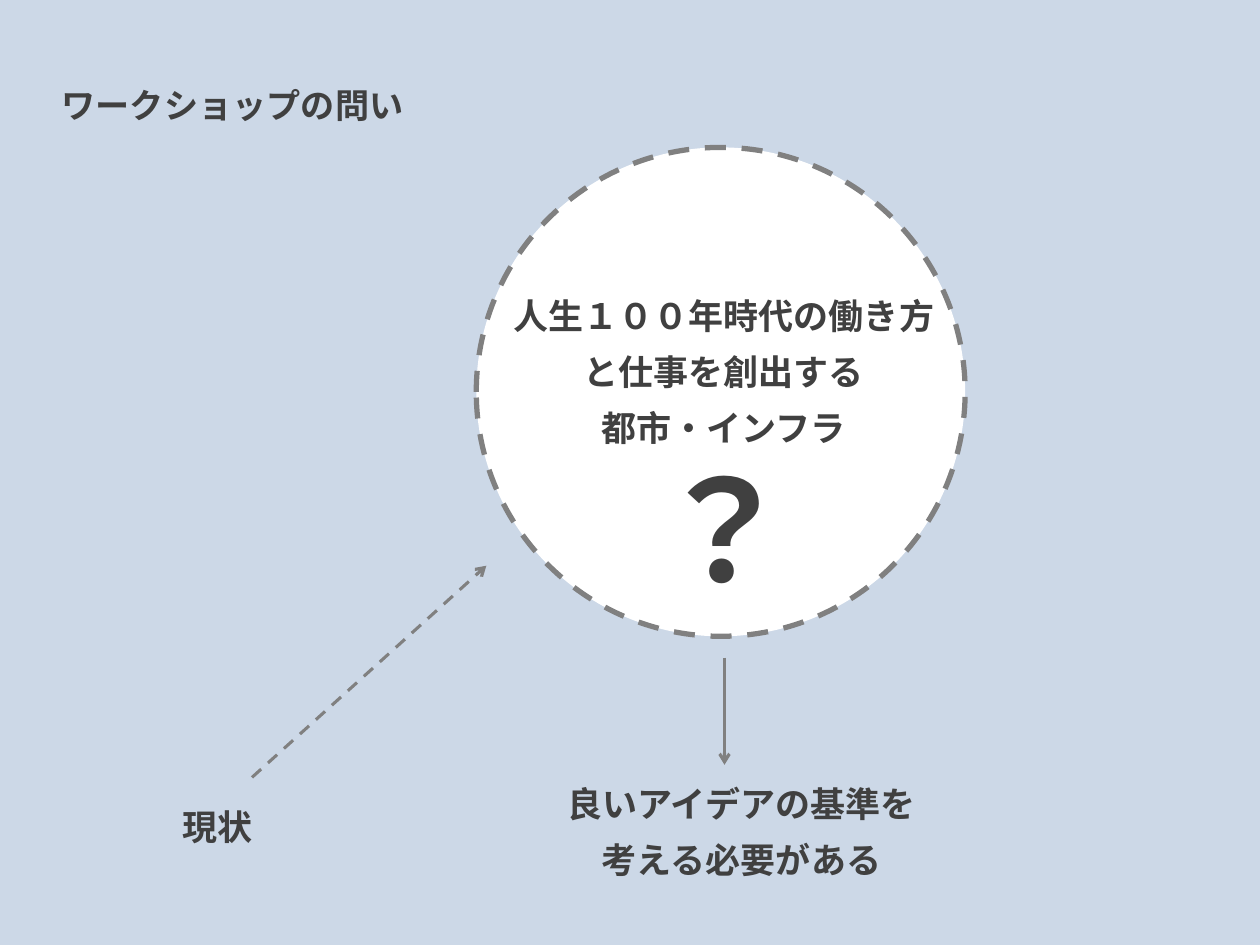
from lxml.etree import SubElement
from pptx import Presentation
from pptx.dml.color import RGBColor
from pptx.enum.dml import MSO_LINE
from pptx.enum.shapes import MSO_CONNECTOR, MSO_SHAPE
from pptx.enum.text import MSO_ANCHOR, MSO_AUTO_SIZE, PP_ALIGN
from pptx.oxml.ns import qn
from pptx.util import Inches, Pt

BACK = RGBColor(0xCC, 0xD8, 0xE7)
WHITE = RGBColor(0xFF, 0xFF, 0xFF)
GREY = RGBColor(0x80, 0x80, 0x80)
INK = RGBColor(0x40, 0x40, 0x40)
FONT = "Noto Sans CJK JP"
LEAD = Pt(32)


def style(run, size):
    font = run.font
    font.size, font.bold, font.name = Pt(size), True, FONT
    font.color.rgb = INK
    SubElement(run._r.get_or_add_rPr(), qn("a:ea"), typeface=FONT)


def write(shape, paras, size=20, lead=LEAD, align=PP_ALIGN.LEFT,
          anchor=MSO_ANCHOR.MIDDLE, before=0):
    """Fill the shape; each paragraph is a list of lines."""
    frame = shape.text_frame
    frame.word_wrap = True
    frame.auto_size = MSO_AUTO_SIZE.NONE
    frame.vertical_anchor = anchor
    for i, lines in enumerate(paras):
        para = frame.add_paragraph() if i else frame.paragraphs[0]
        para.alignment, para.line_spacing = align, lead
        para.space_before = Pt(before)
        for j, line in enumerate(lines):
            if j:
                para.add_line_break()
            run = para.add_run()
            run.text = line
            style(run, size)


def label(slide, box, paras, **look):
    shape = slide.shapes.add_textbox(*map(Inches, box))
    write(shape, paras, **look)


def arrow(slide, start, end, dash=None):
    line = slide.shapes.add_connector(
        MSO_CONNECTOR.STRAIGHT, *map(Inches, start + end))
    line.line.color.rgb = GREY
    line.line.width = Pt(1.75)
    if dash:
        line.line.dash_style = dash
    SubElement(line.line._get_or_add_ln(), qn("a:tailEnd"), type="arrow")
    SubElement(line._element.spPr, qn("a:effectLst"))


def theme(slide, left, top, side):
    """Dashed circle holding the title and a large question mark."""
    disc = slide.shapes.add_shape(
        MSO_SHAPE.OVAL, *map(Inches, (left, top, side, side)))
    disc.shadow.inherit = False
    disc.fill.solid()
    disc.fill.fore_color.rgb = WHITE
    disc.line.color.rgb = GREY
    disc.line.width = Pt(3)
    disc.line.dash_style = MSO_LINE.DASH

    title = slide.shapes.title
    title.left, title.top = Inches(left + 0.08), Inches(top + 0.92)
    title.width, title.height = Inches(3.77), Inches(1.61)
    write(title, [["人生１００年時代の働き方と仕事を創出する", "都市・インフラ"]],
          align=PP_ALIGN.CENTER)
    disc._element.addnext(title._element)  # bring the title in front
    label(slide, (left + 1.31, top + 2.59, 1.01, 1.72), [["？"]], size=80)


def main():
    deck = Presentation()
    deck.slide_width, deck.slide_height = Inches(10), Inches(7.5)
    slide = deck.slides.add_slide(deck.slide_layouts[5])
    slide.background.fill.solid()
    slide.background.fill.fore_color.rgb = BACK

    theme(slide, 3.78, 1.17, 3.88)
    label(slide, (0.39, 0.43, 6.95, 0.74), [["ワークショップの問い"]],
          size=19.5, lead=1.2)
    label(slide, (1.35, 6.38, 0.79, 0.33), [["現状"]],
          lead=0.9, anchor=MSO_ANCHOR.TOP, before=10)
    label(slide, (4, 5.74, 3.77, 1.61),
          [["良いアイデアの基準を"], ["考える必要がある"]],
          align=PP_ALIGN.CENTER)
    arrow(slide, (2, 6.17), (3.86, 4.49), MSO_LINE.DASH)
    arrow(slide, (5.75, 5.22), (5.75, 6.07))
    deck.save("out.pptx")


if __name__ == "__main__":
    main()
